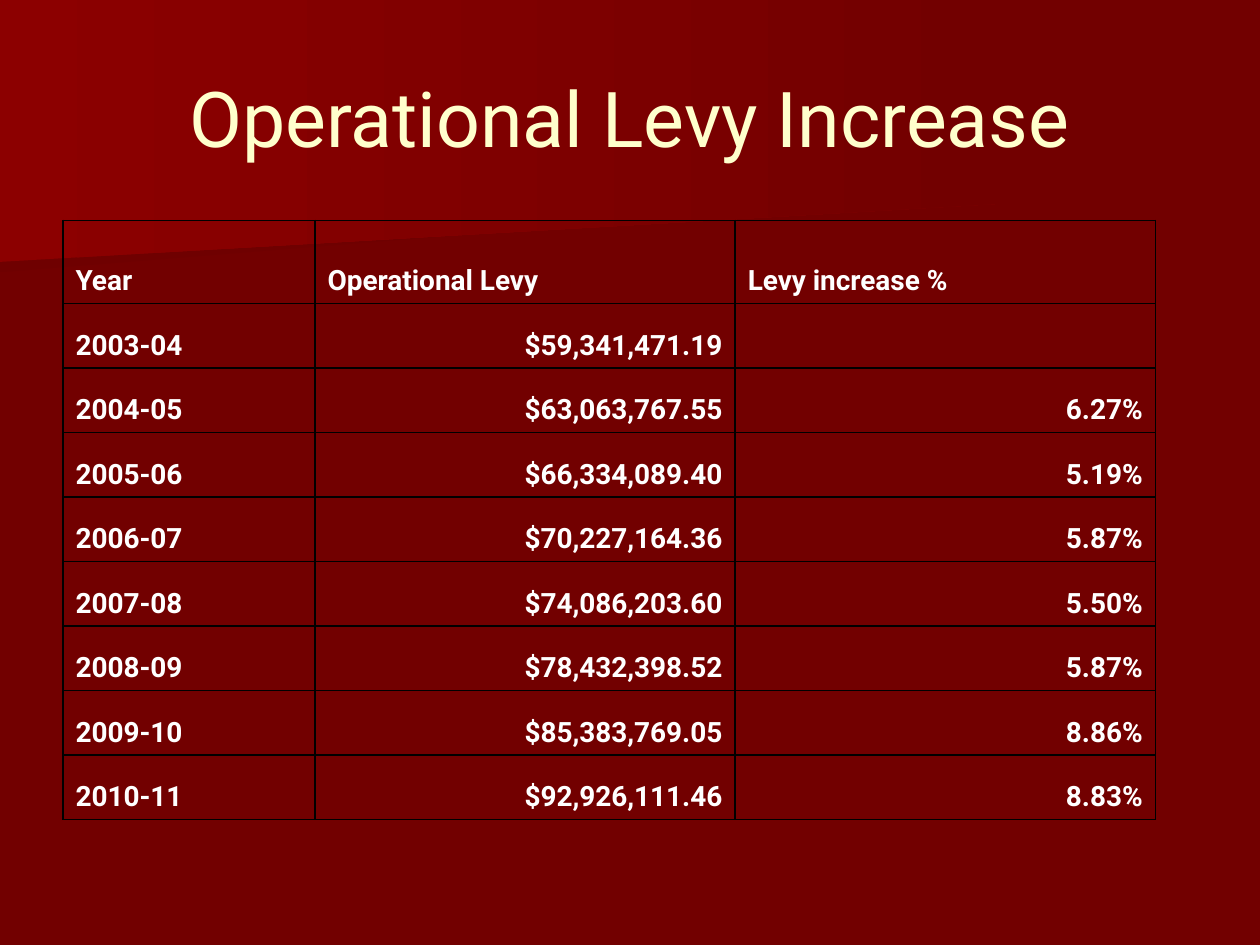
"""Build the Operational Levy Increase slide."""
import dataclasses

import pptx
import pptx.dml.color
import pptx.enum.text
import pptx.oxml
import pptx.oxml.ns
import pptx.util

Cm = pptx.util.Cm
Pt = pptx.util.Pt
Align = pptx.enum.text.PP_ALIGN
Anchor = pptx.enum.text.MSO_ANCHOR


@dataclasses.dataclass(frozen=True)
class Theme:
    back: str = "720000"
    shade: str = "6F0000"
    glow: str = "8C0000"
    title: str = "FFFFCC"
    text: str = "FFFFFF"
    line: str = "000000"
    font: str = "Roboto"
    big: int = 44
    small: int = 16


theme = Theme()


def color(code):
    return pptx.dml.color.RGBColor.from_string(code)


def style(para, size, code, bold):
    for run in para.runs:
        run.font.name = theme.font
        run.font.size = Pt(size)
        run.font.bold = bold
        run.font.color.rgb = color(code)


deck = pptx.Presentation()
deck.slide_width, deck.slide_height = Cm(25.4), Cm(19.05)
slide = deck.slides.add_slide(deck.slide_layouts[6])
slide.background.fill.solid()
slide.background.fill.fore_color.rgb = color(theme.back)

bands = [
    (theme.shade, [(19.76, 3.89), (0, 5.49), (0, 2.57), (19.79, 2.57), (19.76, 3.25)]),
    (theme.glow, [(20.12, 4.11), (0, 5.28), (0, 0), (20.12, 0)]),
]
for start, spots in bands:
    points = [(Cm(x), Cm(y)) for x, y in spots]
    pen = slide.shapes.build_freeform(*points[0])
    pen.add_line_segments(points[1:], close=True)
    band = pen.convert_to_shape()
    band.shadow.inherit = False
    band.line.fill.background()
    band.fill.gradient()
    band.fill.gradient_angle = 0
    for stop, code in zip(band.fill.gradient_stops, (start, theme.back)):
        stop.color.rgb = color(code)

title = slide.shapes.add_textbox(Cm(1.27), Cm(0.76), Cm(22.86), Cm(3.18))
frame = title.text_frame
frame.word_wrap = True
frame.vertical_anchor = Anchor.MIDDLE
frame.text = "Operational Levy Increase"
frame.paragraphs[0].alignment = Align.CENTER
style(frame.paragraphs[0], theme.big, theme.title, False)

rows = [
    ("Year", "Operational Levy", "Levy increase %"),
    ("2003-04", "$59,341,471.19", ""),
    ("2004-05", "$63,063,767.55", "6.27%"),
    ("2005-06", "$66,334,089.40", "5.19%"),
    ("2006-07", "$70,227,164.36", "5.87%"),
    ("2007-08", "$74,086,203.60", "5.50%"),
    ("2008-09", "$78,432,398.52", "5.87%"),
    ("2009-10", "$85,383,769.05", "8.86%"),
    ("2010-11", "$92,926,111.46", "8.83%"),
]
widths = [5.08, 8.47, 8.47]
heights = [1.68] + [1.3] * (len(rows) - 1)
table = slide.shapes.add_table(
    len(rows), len(widths), Cm(1.27), Cm(4.44), Cm(sum(widths)), Cm(sum(heights))
).table
table.first_row = table.horz_banding = False
for col, width in zip(table.columns, widths):
    col.width = Cm(width)
for row, height in zip(table.rows, heights):
    row.height = Cm(height)

for r, row in enumerate(rows):
    for c, text in enumerate(row):
        cell = table.cell(r, c)
        cell.vertical_anchor = Anchor.BOTTOM
        cell.text_frame.text = text
        para = cell.text_frame.paragraphs[0]
        para.alignment = Align.RIGHT if r and c else Align.LEFT
        style(para, theme.small, theme.text, True)
        props = cell._tc.get_or_add_tcPr()
        for side in ("lnL", "lnR", "lnT", "lnB"):
            props.append(pptx.oxml.parse_xml(
                f'<a:{side} {pptx.oxml.ns.nsdecls("a")} w="{Pt(1)}"><a:solidFill>'
                f'<a:srgbClr val="{theme.line}"/></a:solidFill></a:{side}>'
            ))
        cell.fill.background()

deck.save("out.pptx")
